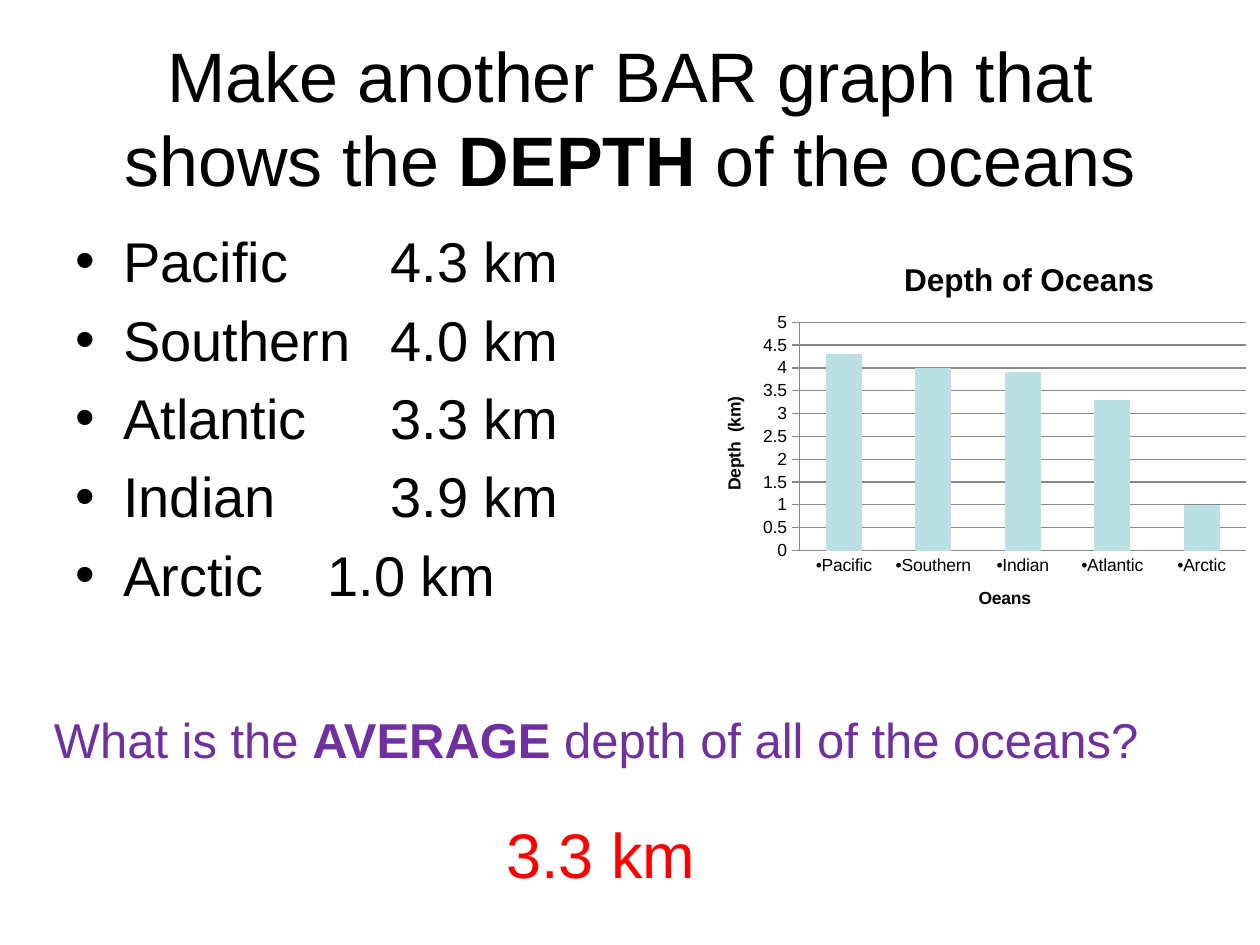
"""Builds a slide on ocean depths with a list, a column chart and a question."""
from lxml import etree
from pptx import Presentation
from pptx import util as u
from pptx.chart import data
from pptx.dml.color import RGBColor
from pptx.enum import chart as charts, text
from pptx.oxml import ns

FONT = "Arial"
COLORS = {"ink": "000000", "question": "7030A0", "answer": "FF0000",
          "column": "BBE0E3", "line": "878787"}

TITLE = [("Make another BAR graph that shows the ", False), ("DEPTH", True),
         (" of the oceans", False)]
OCEANS = ["Pacific\t\t4.3 km", "Southern\t4.0 km", "Atlantic\t\t3.3 km",
          "Indian\t\t3.9 km", "Arctic\t\t1.0 km"]
QUESTION = [("What is the ", False), ("AVERAGE", True),
            (" depth of all of the oceans?", False)]
ANSWER = [("3.3 km", False)]
DEPTHS = {"•Pacific": 4.3, "•Southern": 4, "•Indian": 3.9, "•Atlantic": 3.3, "•Arctic": 1}
CHART_TITLE = "Depth of Oceans"
CATEGORY_TITLE, VALUE_TITLE = "Oeans", "Depth  (km)"
PLOT = {"x": 0.15, "y": 0.21, "w": 0.68, "h": 0.57}


def inches(*lengths):
    return [u.Inches(length) for length in lengths]


def set_font(font, size, color="ink", bold=False):
    for name, value in {"name": FONT, "size": u.Pt(size), "bold": bold}.items():
        setattr(font, name, value)
    font.color.rgb = RGBColor.from_string(COLORS[color])


def add_runs(paragraph, runs, size, color="ink"):
    for words, bold in runs:
        run = paragraph.add_run()
        run.text = words
        set_font(run.font, size, color, bold)


def add_title(slide):
    title = slide.shapes.title
    title.left, title.top, title.width, title.height = inches(0.5, 0.3, 9, 1.25)
    frame = title.text_frame
    frame.auto_size = text.MSO_AUTO_SIZE.NONE
    frame.vertical_anchor = text.MSO_ANCHOR.MIDDLE
    paragraph = frame.paragraphs[0]
    paragraph.alignment = text.PP_ALIGN.CENTER
    add_runs(paragraph, TITLE, 40)


def add_ocean_list(slide):
    frame = slide.shapes.add_textbox(*inches(0.5, 1.75, 9, 4.95)).text_frame
    frame.word_wrap = True
    for index, ocean in enumerate(OCEANS):
        paragraph = frame.add_paragraph() if index else frame.paragraphs[0]
        add_runs(paragraph, [(ocean, False)], 32)
        properties = paragraph._p.get_or_add_pPr()
        indent = u.Inches(0.38)
        properties.set("marL", str(indent))
        properties.set("indent", str(-indent))
        spacing = etree.SubElement(properties, ns.qn("a:spcBef"))
        etree.SubElement(spacing, ns.qn("a:spcPct"), val="20000")
        etree.SubElement(properties, ns.qn("a:buFont"), typeface=FONT)
        etree.SubElement(properties, ns.qn("a:buChar"), char="•")


def add_line_of_text(slide, box, runs, size, color):
    frame = slide.shapes.add_textbox(*inches(*box)).text_frame
    frame.word_wrap = False
    frame.auto_size = text.MSO_AUTO_SIZE.SHAPE_TO_FIT_TEXT
    add_runs(frame.paragraphs[0], runs, size, color)


def set_heading(owner, words, size):
    owner.has_title = True
    title = owner.chart_title if hasattr(owner, "chart_title") else owner.axis_title
    add_runs(title.text_frame.paragraphs[0], [(words, True)], size)


def set_line(line):
    line.color.rgb = RGBColor.from_string(COLORS["line"])
    line.width = u.Pt(0.75)


def place_plot(chart):
    area = chart._chartSpace.chart.plotArea
    for old in area.findall(ns.qn("c:layout")):
        area.remove(old)
    layout = etree.Element(ns.qn("c:layout"))
    area.insert(0, layout)
    manual = etree.SubElement(layout, ns.qn("c:manualLayout"))
    settings = {"layoutTarget": "inner", "xMode": "edge", "yMode": "edge", **PLOT}
    for name, value in settings.items():
        etree.SubElement(manual, ns.qn(f"c:{name}"), val=str(value))


def add_depth_chart(slide):
    chart_data = data.CategoryChartData()
    chart_data.categories = list(DEPTHS)
    chart_data.add_series("", list(DEPTHS.values()))
    chart = slide.shapes.add_chart(charts.XL_CHART_TYPE.COLUMN_CLUSTERED,
                                   *inches(5.56, 1.89, 5.22, 3.18), chart_data).chart
    set_font(chart.font, 10)
    chart.has_legend = False
    chart.has_title = True
    set_heading(chart, CHART_TITLE, 18)

    plot = chart.plots[0]
    plot.gap_width = 150
    plot.vary_by_categories = False
    fill = plot.series[0].format.fill
    fill.solid()
    fill.fore_color.rgb = RGBColor.from_string(COLORS["column"])

    axes = [(chart.category_axis, CATEGORY_TITLE, charts.XL_TICK_MARK.NONE),
            (chart.value_axis, VALUE_TITLE, charts.XL_TICK_MARK.OUTSIDE)]
    for axis, words, tick in axes:
        set_heading(axis, words, 10)
        set_line(axis.format.line)
        axis.major_tick_mark = tick
        axis.minor_tick_mark = charts.XL_TICK_MARK.NONE
    values = chart.value_axis
    values.minimum_scale, values.maximum_scale, values.major_unit = 0, 5, 0.5
    values.has_major_gridlines = True
    set_line(values.major_gridlines.format.line)
    values.tick_labels.number_format = "General"
    values.tick_labels.number_format_is_linked = False
    place_plot(chart)


def main():
    presentation = Presentation()
    presentation.slide_width, presentation.slide_height = inches(10, 7.5)
    slide = presentation.slides.add_slide(presentation.slide_layouts[5])
    add_title(slide)
    add_ocean_list(slide)
    add_line_of_text(slide, (0.33, 5.58, 8.84, 0.57), QUESTION, 28, "question")
    add_depth_chart(slide)
    add_line_of_text(slide, (3.92, 6.42, 1.72, 0.71), ANSWER, 36, "answer")
    presentation.save("out.pptx")


if __name__ == "__main__":
    main()
